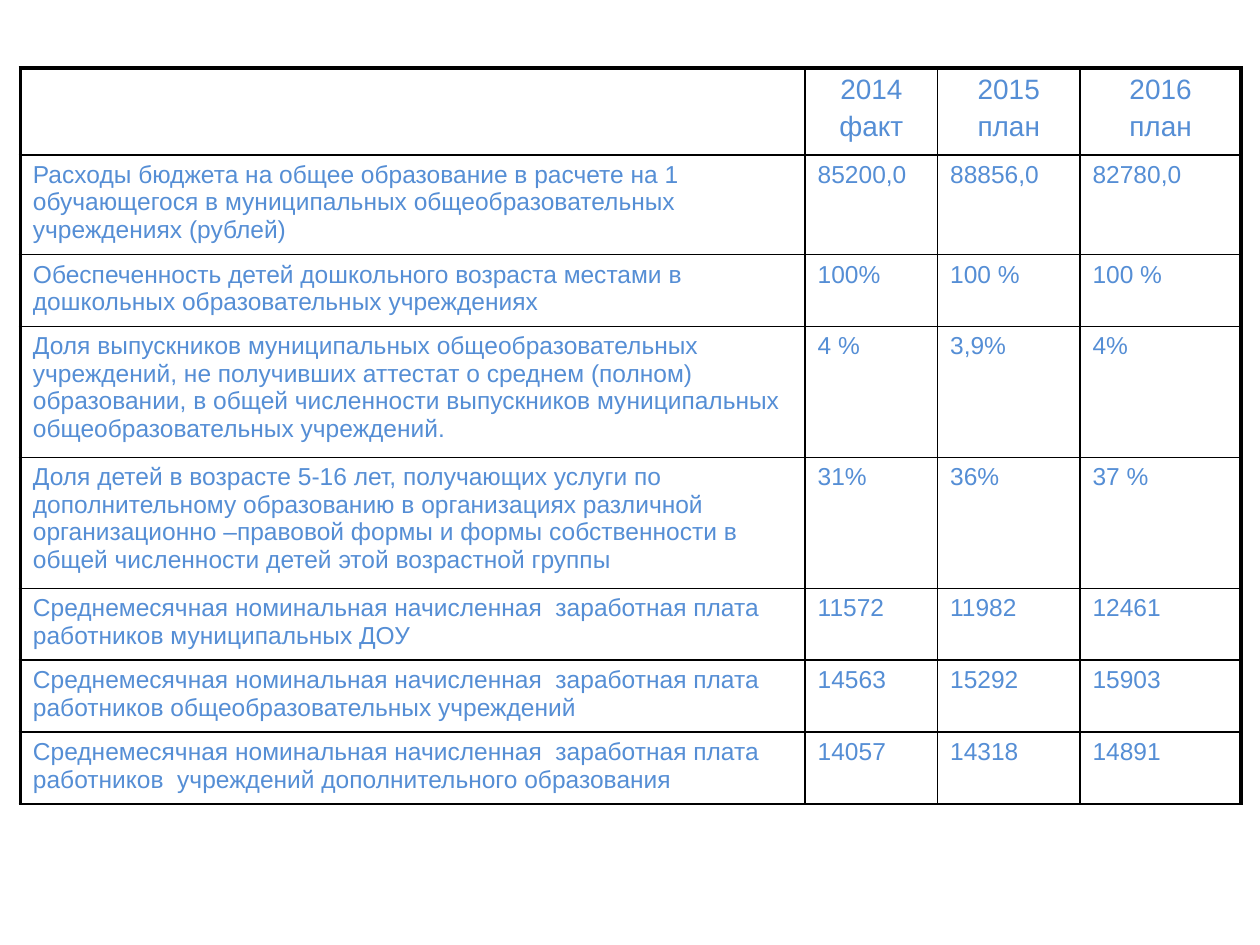
from lxml.etree import SubElement
from pptx import Presentation
from pptx.dml.color import RGBColor as Color
from pptx.enum.text import PP_ALIGN as Align
from pptx.oxml.ns import qn
from pptx.util import Cm, Pt

COLORS = {"text": "558ED5", "border": "000000"}
FONT = "Arial"
THIN, THICK = 1, 2.25

COLUMN_WIDTHS = [15.82, 2.67, 2.87, 3.25]
ROW_HEIGHTS = [1.75, 2.01, 1.45, 2.64, 2.64, 1.45, 1.45, 1.45]
WAGE = "Среднемесячная номинальная начисленная  заработная плата работников "
ROWS = [
    ["", "2014\nфакт", "2015\nплан", "2016\nплан"],
    ["Расходы бюджета на общее образование в расчете на 1 обучающегося "
     "в муниципальных общеобразовательных учреждениях (рублей)",
     "85200,0", "88856,0", "82780,0"],
    ["Обеспеченность детей дошкольного возраста местами в дошкольных "
     "образовательных учреждениях", "100%", "100 %", "100 %"],
    ["Доля выпускников муниципальных общеобразовательных учреждений, "
     "не получивших аттестат о среднем (полном) образовании, в общей "
     "численности выпускников муниципальных общеобразовательных учреждений.",
     "4 %", "3,9%", "4%"],
    ["Доля детей в возрасте 5-16 лет, получающих услуги по дополнительному "
     "образованию в организациях различной организационно –правовой формы "
     "и формы собственности в общей численности детей этой возрастной группы",
     "31%", "36%", "37 %"],
    [WAGE + "муниципальных ДОУ", "11572", "11982", "12461"],
    [WAGE + "общеобразовательных учреждений", "14563", "15292", "15903"],
    [WAGE + " учреждений дополнительного образования",
     "14057", "14318", "14891"],
]


def write_text(frame, text, size=14, color="text", align=Align.LEFT):
    """Write one paragraph per line, spaced by a fifth of the text size."""
    for index, line in enumerate(text.split("\n")):
        paragraph = frame.add_paragraph() if index else frame.paragraphs[0]
        paragraph.alignment = align
        if index:
            paragraph.space_before = Pt(size * 0.2)
        font = paragraph.add_run().font if line else paragraph.font
        if line:
            paragraph.runs[0].text = line
        font.name, font.size = FONT, Pt(size)
        font.color.rgb = Color.from_string(COLORS[color])


def set_borders(cell, widths):
    """Set the left, right, top and bottom borders, in points."""
    properties = cell._tc.get_or_add_tcPr()
    for index, (side, width) in enumerate(zip("LRTB", widths)):
        line = SubElement(properties, qn(f"a:ln{side}"), w=str(Pt(width)))
        fill = SubElement(line, qn("a:solidFill"))
        SubElement(fill, qn("a:srgbClr"), val=COLORS["border"])
        properties.insert(index, line)


class SlideBuilder:
    def __init__(self, presentation):
        self.slide = presentation.slides.add_slide(presentation.slide_layouts[6])

    def add_table(self, left, top, rows, widths, heights):
        shape = self.slide.shapes.add_table(
            len(rows), len(widths), Cm(left), Cm(top),
            Cm(sum(widths)), Cm(sum(heights)))
        table = shape.table
        table.first_row = table.horz_banding = False
        for column, width in zip(table.columns, widths):
            column.width = Cm(width)
        for row, height in zip(table.rows, heights):
            row.height = Cm(height)
        last = len(widths) - 1
        for r, texts in enumerate(rows):
            for c, text in enumerate(texts):
                cell = table.cell(r, c)
                cell.fill.background()
                set_borders(cell, [THICK if c == 0 else THIN,
                                   THICK if c == last else THIN,
                                   THICK if r == 0 else THIN, THIN])
                header = {"size": 16, "align": Align.CENTER} if r == 0 else {}
                write_text(cell.text_frame, text, **header)


def main():
    presentation = Presentation()
    presentation.slide_width, presentation.slide_height = Cm(25.4), Cm(19.05)
    builder = SlideBuilder(presentation)
    builder.add_table(0.41, 1.37, ROWS, COLUMN_WIDTHS, ROW_HEIGHTS)
    presentation.save("out.pptx")


if __name__ == "__main__":
    main()
